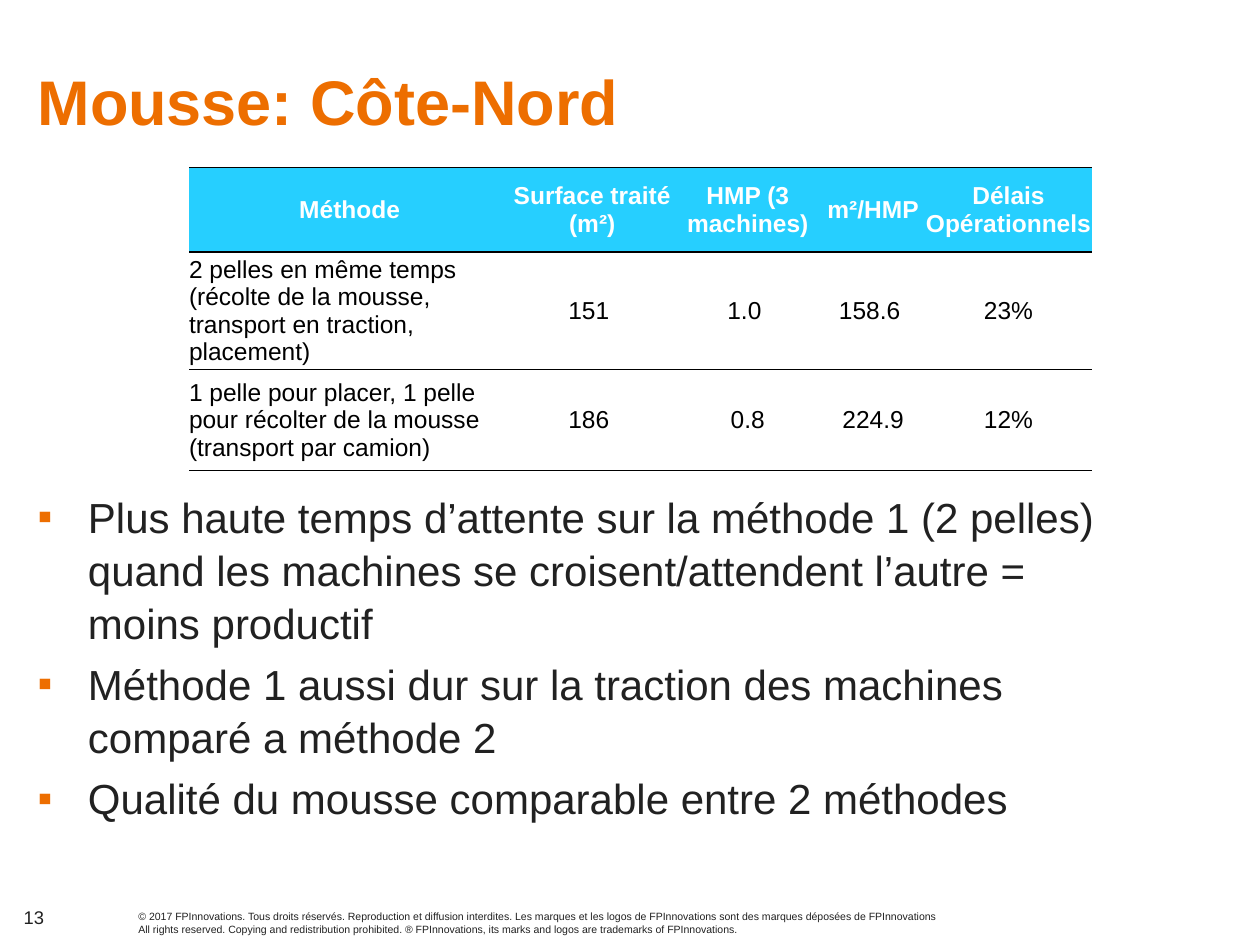
from dataclasses import dataclass

from lxml import etree
from pptx import Presentation
from pptx import util as u
from pptx.dml.color import RGBColor
from pptx.enum import text
from pptx.oxml.ns import qn

UNIT = 0.1
ORANGE, INK, CYAN, BLACK, WHITE = "ED6E00", "212121", "26CFFF", "000000", "FFFFFF"
PLAIN = "{2D5ABB26-0587-4C30-8999-92F81FD0307C}"
COLS = (25.5, 13, 11.7, 8.2, 13.3)
ROWS = (6.7, 8, 8)
DATA = (
    ("Méthode", "Surface traité (m²)", "HMP (3 machines)", "m²/HMP", "Délais Opérationnels"),
    ("2 pelles en même temps (récolte de la mousse, transport en traction, placement)",
     "151 ", "1.0 ", "158.6 ", "23%"),
    ("1 pelle pour placer, 1 pelle pour récolter de la mousse (transport par camion)",
     "186 ", "0.8", "224.9", "12%"),
)


@dataclass
class Block:
    """Text placed in columns and rows of the slide grid."""
    col: float
    row: float
    wide: float
    high: float
    lines: tuple
    size: float
    color: str = INK
    bold: bool = False
    middle: bool = False
    bullet: bool = False
    pitch: float = 1.0


BLOCKS = (
    Block(10, 71.7, 71.5, 3, (
        "© 2017 FPInnovations. Tous droits réservés. Reproduction et diffusion interdites. "
        "Les marques et les logos de FPInnovations sont des marques déposées de FPInnovations",
        "All rights reserved. Copying and redistribution prohibited. "
        "® FPInnovations, its marks and logos are trademarks of FPInnovations.",
    ), 6, pitch=1.05),
    Block(2, 1.7, 96.1, 12.5, ("Mousse: Côte-Nord",), 36, ORANGE, bold=True, middle=True),
    Block(0.9, 71.4, 7.7, 3.6, ("13",), 10.5),
    Block(2, 38.3, 88, 27.8, (
        "Plus haute temps d’attente sur la méthode 1 (2 pelles) quand les machines "
        "se croisent/attendent l’autre = moins productif",
        "Méthode 1 aussi dur sur la traction des machines comparé a méthode 2",
        "Qualité du mousse comparable entre 2 méthodes",
    ), 24, bullet=True, pitch=1.05),
)


def grid(n: float) -> int:
    """Turn grid units into a length."""
    return u.Inches(n * UNIT)


def hue(code: str) -> RGBColor:
    """Turn a hex string into a colour."""
    return RGBColor.from_string(code)


def style(para, size: float, color: str, bold: bool) -> None:
    """Set the font of a paragraph."""
    font = para.font
    font.name, font.size, font.bold = "Arial", u.Pt(size), bold
    font.color.rgb = hue(color)


def mark(para) -> None:
    """Give a paragraph an orange square bullet and a hanging indent."""
    props = para._p.get_or_add_pPr()
    props.set("marL", str(grid(4)))
    props.set("indent", str(-grid(4)))
    tint = etree.SubElement(props, qn("a:buClr"))
    etree.SubElement(tint, qn("a:srgbClr"), val=ORANGE)
    etree.SubElement(props, qn("a:buFont"), typeface="Arial")
    etree.SubElement(props, qn("a:buChar"), char="▪")


def write(slide, block: Block) -> None:
    """Draw a text block."""
    box = slide.shapes.add_textbox(*map(grid, (block.col, block.row, block.wide, block.high)))
    frame = box.text_frame
    frame.word_wrap = True
    if block.middle:
        frame.vertical_anchor = text.MSO_ANCHOR.MIDDLE
    for i, line in enumerate(block.lines):
        para = frame.add_paragraph() if i else frame.paragraphs[0]
        para.text = line
        if block.bullet:
            mark(para)
            if i:
                para.space_before = u.Pt(0.2 * block.size)
        para.line_spacing = block.pitch
        style(para, block.size, block.color, block.bold)


def rule(cell) -> None:
    """Draw black lines above and below a cell."""
    props = cell._tc.get_or_add_tcPr()
    for i, side in enumerate(("a:lnT", "a:lnB")):
        line = etree.Element(qn(side), w=str(u.Pt(1)))
        fill = etree.SubElement(line, qn("a:solidFill"))
        etree.SubElement(fill, qn("a:srgbClr"), val=BLACK)
        props.insert(i, line)


def fill(cell, words: str, head: bool, left: bool) -> None:
    """Fill one table cell with styled text."""
    cell.margin_left = cell.margin_right = cell.margin_top = cell.margin_bottom = 0
    cell.vertical_anchor = text.MSO_ANCHOR.MIDDLE
    if head:
        cell.fill.solid()
        cell.fill.fore_color.rgb = hue(CYAN)
    else:
        cell.fill.background()
    rule(cell)
    para = cell.text_frame.paragraphs[0]
    para.text = words
    para.alignment = text.PP_ALIGN.LEFT if left else text.PP_ALIGN.CENTER
    style(para, 14, WHITE if head else BLACK, head)


def chart(slide) -> None:
    """Draw the table of methods."""
    spot = map(grid, (15, 13.3, sum(COLS), sum(ROWS)))
    table = slide.shapes.add_table(len(ROWS), len(COLS), *spot).table
    table.horz_banding = False
    table._tbl.tblPr.find(qn("a:tableStyleId")).text = PLAIN
    for col, wide in zip(table.columns, COLS):
        col.width = grid(wide)
    for r, (high, words) in enumerate(zip(ROWS, DATA)):
        table.rows[r].height = grid(high)
        for c, word in enumerate(words):
            fill(table.cell(r, c), word, r == 0, r > 0 and c == 0)


def main() -> None:
    """Build and save the slide."""
    deck = Presentation()
    deck.slide_width, deck.slide_height = grid(100), grid(75)
    slide = deck.slides.add_slide(deck.slide_layouts[6])
    for block in BLOCKS:
        write(slide, block)
    chart(slide)
    deck.save("out.pptx")


if __name__ == "__main__":
    main()
